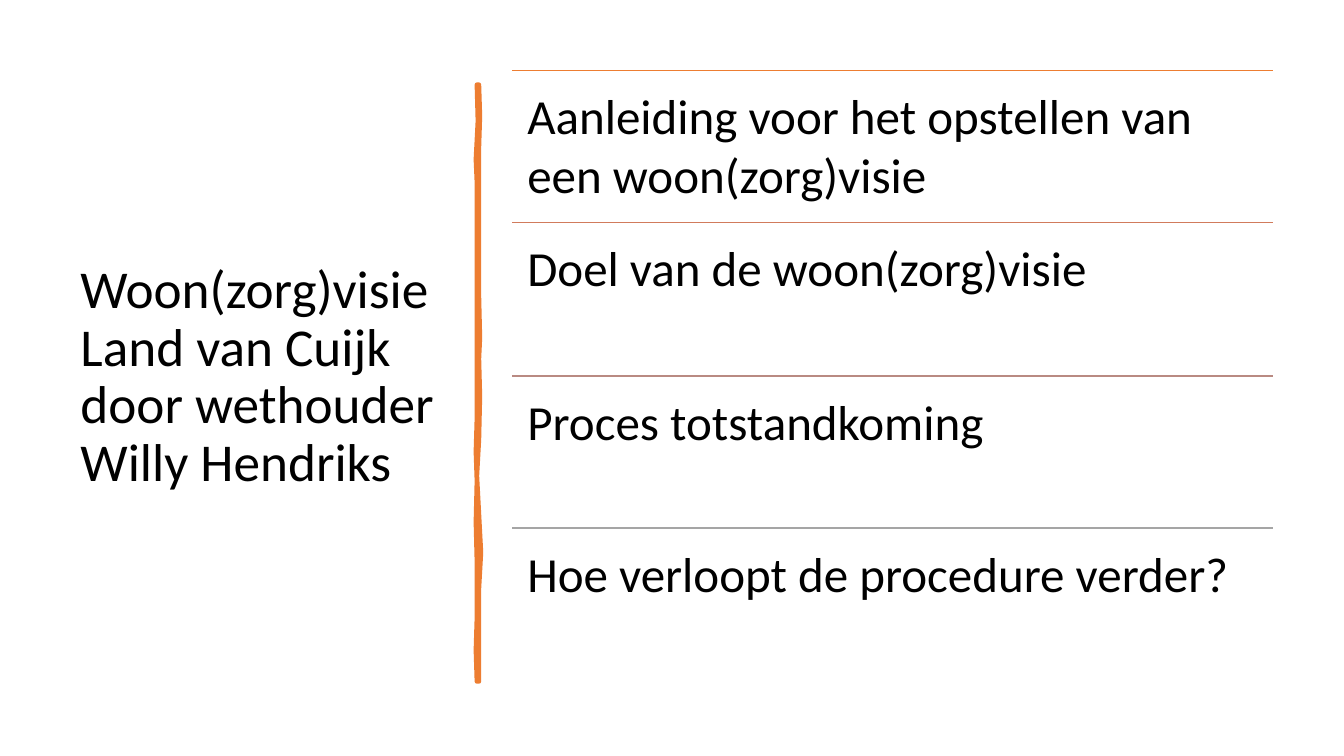
"""Build the agenda slide with a title, a hand-drawn divider and four ruled topics."""
import pptx
import pptx.util
import pptx.dml.color
import pptx.enum.shapes
import pptx.enum.text
import pptx.oxml.ns
import lxml.etree

Inches = pptx.util.Inches
Pt = pptx.util.Pt


def rgb(value):
    return pptx.dml.color.RGBColor.from_string(value)


def add_text(slide, box, text, size, margins, anchor, spacing):
    sp = slide.shapes.add_textbox(*[Inches(v) for v in box])
    tf = sp.text_frame
    tf.word_wrap = True
    tf.vertical_anchor = anchor
    tf.margin_left = tf.margin_right = Inches(margins[0])
    tf.margin_top = tf.margin_bottom = Inches(margins[1])
    p = tf.paragraphs[0]
    p.text = text
    p.line_spacing = spacing
    for r in p.runs:
        r.font.name = "Calibri"
        r.font.size = Pt(size)
        r.font.color.rgb = rgb("000000")


prs = pptx.Presentation()
prs.slide_width = Inches(13.33)
prs.slide_height = Inches(7.5)
s = prs.slides.add_slide(prs.slide_layouts[6])

add_text(s, (0.7, 0.7, 3.74, 6.1),
         "Woon(zorg)visie Land van Cuijk \vdoor wethouder Willy Hendriks",
         38, (0.1, 0.05), pptx.enum.text.MSO_ANCHOR.MIDDLE, 0.9)

divider_points = [
    (4.75, 0.84), (4.76, 1.15), (4.75, 1.46), (4.75, 2.26), (4.75, 2.94),
    (4.76, 3.35), (4.75, 3.56), (4.76, 3.93), (4.75, 4.36), (4.73, 4.72),
    (4.75, 5.1), (4.77, 5.48), (4.75, 5.84), (4.75, 6.76), (4.73, 6.76),
    (4.72, 6.45), (4.73, 6.13), (4.73, 5.57), (4.72, 5.18), (4.73, 4.77),
    (4.72, 4.48), (4.73, 4.15), (4.73, 3.35), (4.73, 2.5), (4.73, 1.81),
    (4.72, 1.58), (4.74, 1.2), (4.73, 0.84),
]
outline = [(Inches(x), Inches(y)) for x, y in divider_points]
builder = s.shapes.build_freeform(*outline[0])
builder.add_line_segments(outline[1:], close=True)
divider = builder.convert_to_shape()
divider.shadow.inherit = False
divider.fill.solid()
divider.fill.fore_color.rgb = rgb("ED7D31")
divider.line.color.rgb = rgb("ED7D31")
divider.line.width = Pt(3.25)

topics = [
    ("Aanleiding voor het opstellen van een woon(zorg)visie", "ED7D31"),
    ("Doel van de woon(zorg)visie", "D17B5C"),
    ("Proces totstandkoming", "B98A82"),
    ("Hoe verloopt de procedure verder?", "A5A5A5"),
]
left, width = 5.08, 7.55
first_top, last_top = 0.7, 5.24
row_height = (last_top - first_top) / (len(topics) - 1)
for i, (topic, color) in enumerate(topics):
    y = round(first_top + i * row_height, 2)
    rule = s.shapes.add_connector(pptx.enum.shapes.MSO_CONNECTOR.STRAIGHT,
                                  Inches(left), Inches(y), Inches(left + width), Inches(y))
    rule.line.color.rgb = rgb(color)
    rule.line.width = Pt(1)
    lxml.etree.SubElement(rule._element.spPr, pptx.oxml.ns.qn("a:effectLst"))
    add_text(s, (left, y, width, row_height), topic, 35, (0.15, 0.15),
             pptx.enum.text.MSO_ANCHOR.TOP, 1.0)

prs.save("out.pptx")
